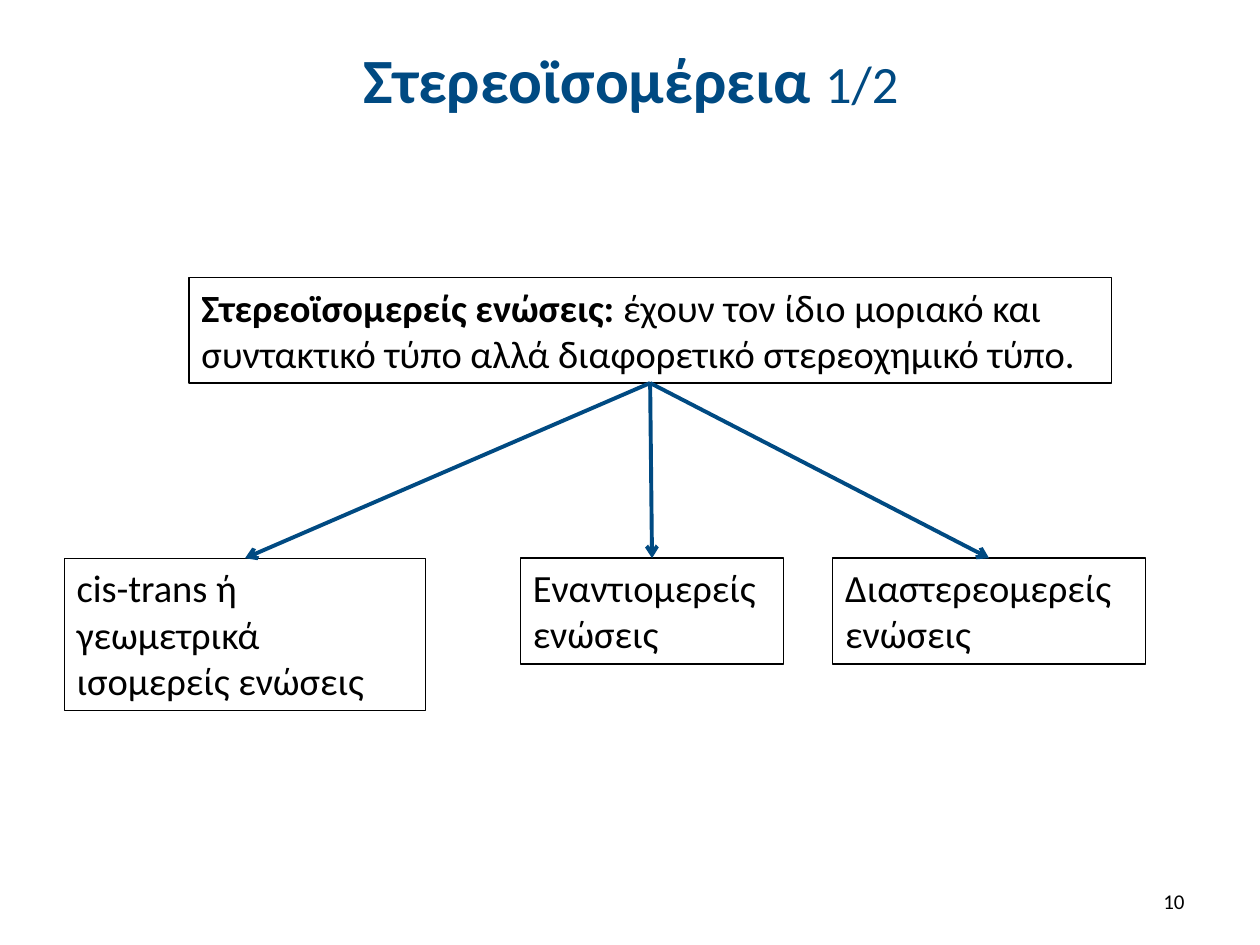
from dataclasses import dataclass

from lxml import etree
from pptx import Presentation
from pptx.dml.color import RGBColor
from pptx.enum.shapes import MSO_CONNECTOR, MSO_SHAPE
from pptx.enum.text import MSO_ANCHOR, MSO_AUTO_SIZE, PP_ALIGN
from pptx.oxml.ns import qn
from pptx.util import Inches, Pt

RECTANGLE = MSO_SHAPE.RECTANGLE
STRAIGHT = MSO_CONNECTOR.STRAIGHT
TOP, MIDDLE = MSO_ANCHOR.TOP, MSO_ANCHOR.MIDDLE
NO_FIT, GROW = MSO_AUTO_SIZE.NONE, MSO_AUTO_SIZE.SHAPE_TO_FIT_TEXT
LEFT, CENTER, RIGHT = PP_ALIGN.LEFT, PP_ALIGN.CENTER, PP_ALIGN.RIGHT


@dataclass(frozen=True)
class Theme:
    font: str = "Calibri"
    accent: RGBColor = RGBColor(0x00, 0x4A, 0x82)
    text: RGBColor = RGBColor(0x00, 0x00, 0x00)
    title_size: int = 36
    counter_size: int = 30
    body_size: int = 22
    number_size: int = 12
    border: float = 0.75
    arrow: float = 2.25


THEME = Theme()

# Content: runs are (text, size, bold)
TITLE = [("Στερεοϊσομέρεια ", THEME.title_size, True),
         ("1/2", THEME.counter_size, False)]
DEFINITION = [
    ("Στερεοϊσομερείς ενώσεις: ", THEME.body_size, True),
    ("έχουν τον ίδιο μοριακό και συντακτικό τύπο αλλά διαφορετικό "
     "στερεοχημικό τύπο.", THEME.body_size, False),
]
# Kinds of stereoisomers: (text, left, width, height)
KINDS = [
    ("cis-trans ή γεωμετρικά ισομερείς ενώσεις", 0.51, 2.87, 1.21),
    ("Εναντιομερείς ενώσεις", 4.13, 2.09, 0.84),
    ("Διαστερεομερείς ενώσεις", 6.61, 2.48, 0.84),
]
SLIDE_NUMBER = [("10", THEME.number_size, False)]

# Layout in inches: left, top, width, height
TITLE_AREA = (0.51, 0.13, 9, 0.99)
DEFINITION_AREA = (1.5, 2.2, 7.32, 0.84)
NUMBER_AREA = (7.17, 6.95, 2.33, 0.4)
KINDS_TOP = 4.43


def write(shape, runs, color, alignment, anchor, fit=NO_FIT):
    frame = shape.text_frame
    frame.word_wrap = True
    frame.auto_size = fit
    frame.vertical_anchor = anchor
    paragraph = frame.paragraphs[0]
    paragraph.alignment = alignment
    paragraph.font.name = THEME.font
    paragraph.font.color.rgb = color
    for text, size, bold in runs:
        run = paragraph.add_run()
        run.text = text
        run.font.name = THEME.font
        run.font.color.rgb = color
        run.font.size = Pt(size)
        run.font.bold = bold


def add_box(slide, area, runs, anchor):
    box = slide.shapes.add_shape(RECTANGLE, *map(Inches, area))
    box.shadow.inherit = False
    box.fill.background()
    box.line.color.rgb = THEME.text
    box.line.width = Pt(THEME.border)
    write(box, runs, THEME.text, LEFT, anchor, GROW)
    return box


def add_arrow(slide, parent, child):
    arrow = slide.shapes.add_connector(STRAIGHT, 0, 0, 0, 0)
    arrow.begin_connect(parent, 2)  # bottom centre
    arrow.end_connect(child, 0)  # top centre
    arrow.line.color.rgb = THEME.accent
    arrow.line.width = Pt(THEME.arrow)
    etree.SubElement(arrow.line._get_or_add_ln(), qn("a:tailEnd"), type="arrow")
    etree.SubElement(arrow._element.spPr, qn("a:effectLst"))


def main():
    presentation = Presentation()
    presentation.slide_width, presentation.slide_height = Inches(10), Inches(7.5)
    slide = presentation.slides.add_slide(presentation.slide_layouts[5])

    # Title
    title = slide.shapes.title
    title.left, title.top, title.width, title.height = map(Inches, TITLE_AREA)
    write(title, TITLE, THEME.accent, CENTER, MIDDLE)

    # Definition and the kinds below it
    definition = add_box(slide, DEFINITION_AREA, DEFINITION, MIDDLE)
    kinds = [
        add_box(slide, (left, KINDS_TOP, width, height),
                [(text, THEME.body_size, False)], TOP)
        for text, left, width, height in KINDS
    ]
    for kind in kinds:
        add_arrow(slide, definition, kind)

    # Slide number
    number = slide.shapes.add_textbox(*map(Inches, NUMBER_AREA))
    write(number, SLIDE_NUMBER, THEME.text, RIGHT, MIDDLE)

    presentation.save("out.pptx")


if __name__ == "__main__":
    main()
